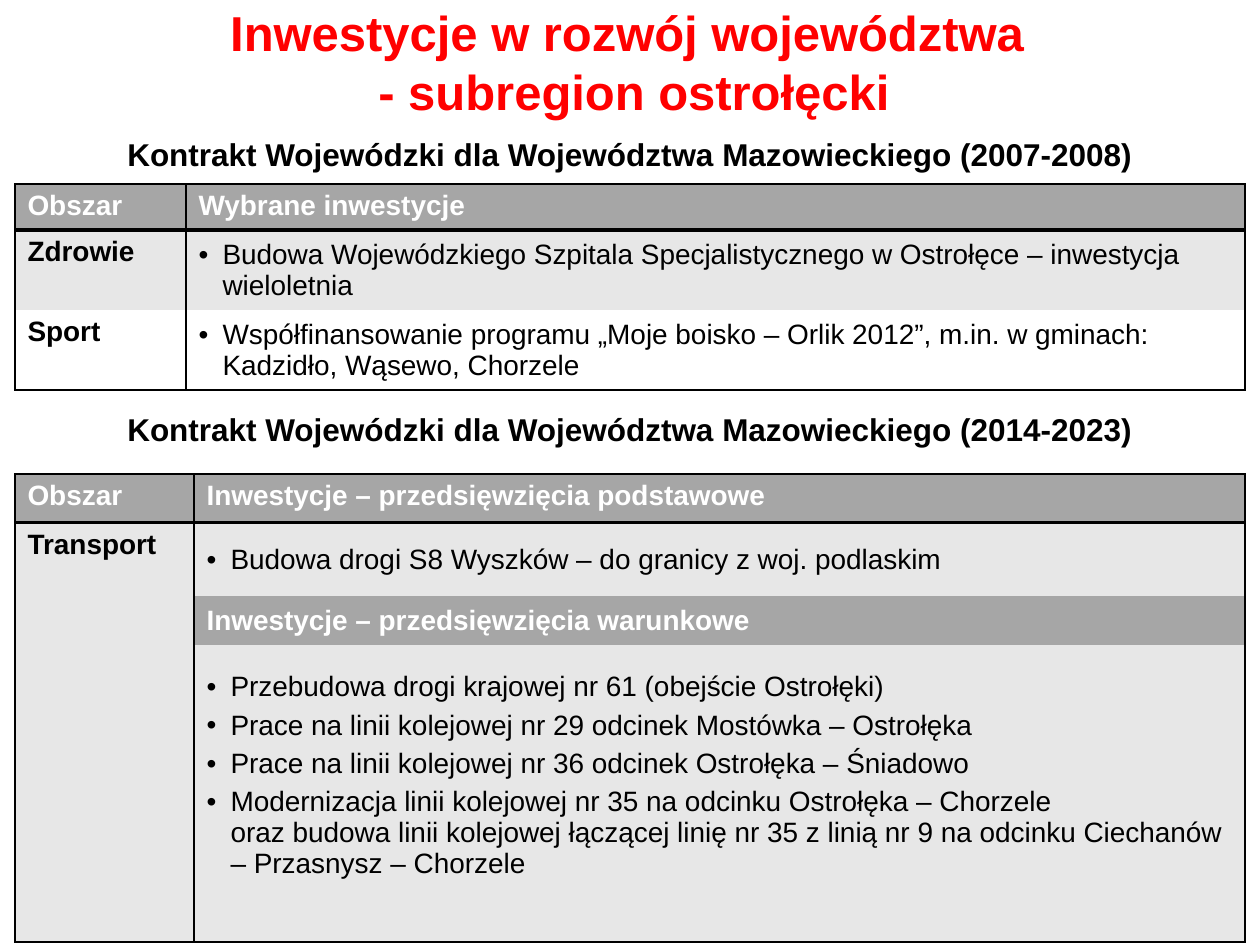
from dataclasses import dataclass

from lxml.etree import SubElement
from pptx import Presentation
from pptx.dml.color import RGBColor
from pptx.enum.text import MSO_ANCHOR, MSO_AUTO_SIZE, PP_ALIGN
from pptx.oxml import parse_xml
from pptx.oxml.ns import nsdecls, qn
from pptx.util import Emu, Pt


@dataclass(frozen=True)
class Theme:
    font: str = "Arial"
    title: str = "FF0000"
    text: str = "000000"
    white: str = "FFFFFF"
    header: str = "A6A6A6"
    band: str = "E7E7E7"
    title_pt: int = 28
    heading_pt: int = 18
    cell_pt: int = 16
    gap_pt: int = 4


@dataclass(frozen=True)
class Entry:
    lines: tuple[str, ...]
    fill: str
    color: str = "000000"
    bold: bool = False
    bullets: bool = False
    middle: bool = False
    gap: int = 0
    pad_bottom: int = 6


@dataclass(frozen=True)
class Grid:
    top: int
    cols: tuple[int, ...]
    heights: tuple[int, ...]
    rows: tuple[tuple[Entry, ...], ...]
    label_span: int = 1


THEME = Theme()
LEFT, WIDTH, INDENT = 15, 1230, 24


def px(n: int) -> Emu:
    return Emu(round(n * 914400 / 126))


def header(text: str, middle: bool = False) -> Entry:
    return Entry((text,), THEME.header, THEME.white, bold=True, middle=middle)


def label(text: str, fill: str) -> Entry:
    return Entry((text,), fill, bold=True)


def items(*lines: str, fill: str, gap: int = 0, pad_bottom: int = 6) -> Entry:
    return Entry(lines, fill, bullets=True, middle=True, gap=gap, pad_bottom=pad_bottom)


def style_font(font, size: int, color: str, bold: bool) -> None:
    font.name, font.size, font.bold = THEME.font, Pt(size), bold
    font.color.rgb = RGBColor.from_string(color)


def fill_placeholder(sp, text: str, box: tuple[int, int, int, int], size: int,
                     color: str, anchor: MSO_ANCHOR) -> None:
    sp.left, sp.top, sp.width, sp.height = map(px, box)
    tf = sp.text_frame
    tf.text = text
    tf.word_wrap, tf.auto_size, tf.vertical_anchor = True, MSO_AUTO_SIZE.NONE, anchor
    p = tf.paragraphs[0]
    p.alignment, p.space_before = PP_ALIGN.CENTER, Pt(0)
    for r in p.runs:
        style_font(r.font, size, color, True)


def set_borders(cell, top: int, bottom: int) -> None:
    sides = {"L": 1, "R": 1, "T": top, "B": bottom}
    for i, (side, pt) in enumerate(sides.items()):
        paint = f'<a:solidFill><a:srgbClr val="{THEME.text}"/></a:solidFill>' if pt else "<a:noFill/>"
        line = parse_xml(f'<a:ln{side} {nsdecls("a")} w="{Pt(pt)}">{paint}</a:ln{side}>')
        cell._tc.get_or_add_tcPr().insert(i, line)


def add_bullet(p) -> None:
    pPr = p._p.get_or_add_pPr()
    pPr.set("marL", str(px(INDENT)))
    pPr.set("indent", str(-px(INDENT)))
    SubElement(pPr, qn("a:buFont")).set("typeface", THEME.font)
    SubElement(pPr, qn("a:buChar")).set("char", "•")


def fill_cell(cell, e: Entry) -> None:
    cell.fill.solid()
    cell.fill.fore_color.rgb = RGBColor.from_string(e.fill)
    cell.vertical_anchor = MSO_ANCHOR.MIDDLE if e.middle else MSO_ANCHOR.TOP
    cell.margin_bottom = px(e.pad_bottom)
    tf = cell.text_frame
    tf.text = "\n".join(e.lines)
    for p in tf.paragraphs:
        if e.bullets:
            add_bullet(p)
        p.space_after = Pt(e.gap)
        for r in p.runs:
            style_font(r.font, THEME.cell_pt, e.color, e.bold)


def draw_grid(s, g: Grid) -> None:
    n = len(g.heights)
    frame = s.shapes.add_table(n, len(g.cols), px(LEFT), px(g.top), px(WIDTH), px(sum(g.heights)))
    tbl = frame.table
    tbl.first_row = tbl.horz_banding = False
    for col, w in zip(tbl.columns, g.cols):
        col.width = px(w)
    for i, (row, h) in enumerate(zip(tbl.rows, g.heights)):
        row.height = px(h)
        for j, cell in enumerate(row.cells):
            last = i + (g.label_span if i and j == 0 else 1) >= n
            set_borders(cell, top={0: 1, 1: 2}.get(i, 0), bottom=2 if i == 0 else int(last))
    if g.label_span > 1:
        tbl.cell(1, 0).merge(tbl.cell(g.label_span, 0))
    for i, entries in enumerate(g.rows):
        first = len(g.cols) - len(entries)
        for j, e in enumerate(entries, first):
            fill_cell(tbl.cell(i, j), e)


GRIDS = (
    Grid(184, (171, 1059), (46, 80, 80), (
        (header("Obszar"), header("Wybrane inwestycje")),
        (label("Zdrowie", THEME.band),
         items("Budowa Wojewódzkiego Szpitala Specjalistycznego w Ostrołęce – inwestycja wieloletnia",
               fill=THEME.band)),
        (label("Sport", THEME.white),
         items("Współfinansowanie programu „Moje boisko – Orlik 2012”, m.in. w gminach: "
               "Kadzidło, Wąsewo, Chorzele", fill=THEME.white)),
    )),
    Grid(474, (179, 1051), (49, 73, 49, 297), (
        (header("Obszar"), header("Inwestycje – przedsięwzięcia podstawowe")),
        (label("Transport", THEME.band),
         items("Budowa drogi S8 Wyszków – do granicy z woj. podlaskim", fill=THEME.band)),
        (header("Inwestycje – przedsięwzięcia warunkowe", middle=True),),
        (items("Przebudowa drogi krajowej nr 61 (obejście Ostrołęki)",
               "Prace na linii kolejowej nr 29 odcinek Mostówka – Ostrołęka",
               "Prace na linii kolejowej nr 36 odcinek Ostrołęka – Śniadowo",
               "Modernizacja linii kolejowej nr 35 na odcinku Ostrołęka – Chorzele\v"
               "oraz budowa linii kolejowej łączącej linię nr 35 z linią nr 9 na odcinku "
               "Ciechanów – Przasnysz – Chorzele",
               fill=THEME.band, gap=THEME.gap_pt, pad_bottom=42),),
    ), label_span=3),
)
HEADINGS = {1: (129, "2007-2008"), 3: (404, "2014-2023")}


def main() -> None:
    prs = Presentation()
    prs.slide_width, prs.slide_height = px(1260), px(945)
    s = prs.slides.add_slide(prs.slide_layouts[4])
    holders = {sp.placeholder_format.idx: sp for sp in s.placeholders}
    for idx in (2, 4):
        el = holders[idx]._element
        el.getparent().remove(el)
    fill_placeholder(holders[0], "Inwestycje w rozwój województwa \v- subregion ostrołęcki",
                     (19, 18, WIDTH, 86), THEME.title_pt, THEME.title, MSO_ANCHOR.MIDDLE)
    for idx, (top, years) in HEADINGS.items():
        fill_placeholder(holders[idx], f"Kontrakt Wojewódzki dla Województwa Mazowieckiego ({years})",
                         (LEFT, top, WIDTH, 38), THEME.heading_pt, THEME.text, MSO_ANCHOR.TOP)
    for g in GRIDS:
        draw_grid(s, g)
    prs.save("out.pptx")


if __name__ == "__main__":
    main()
